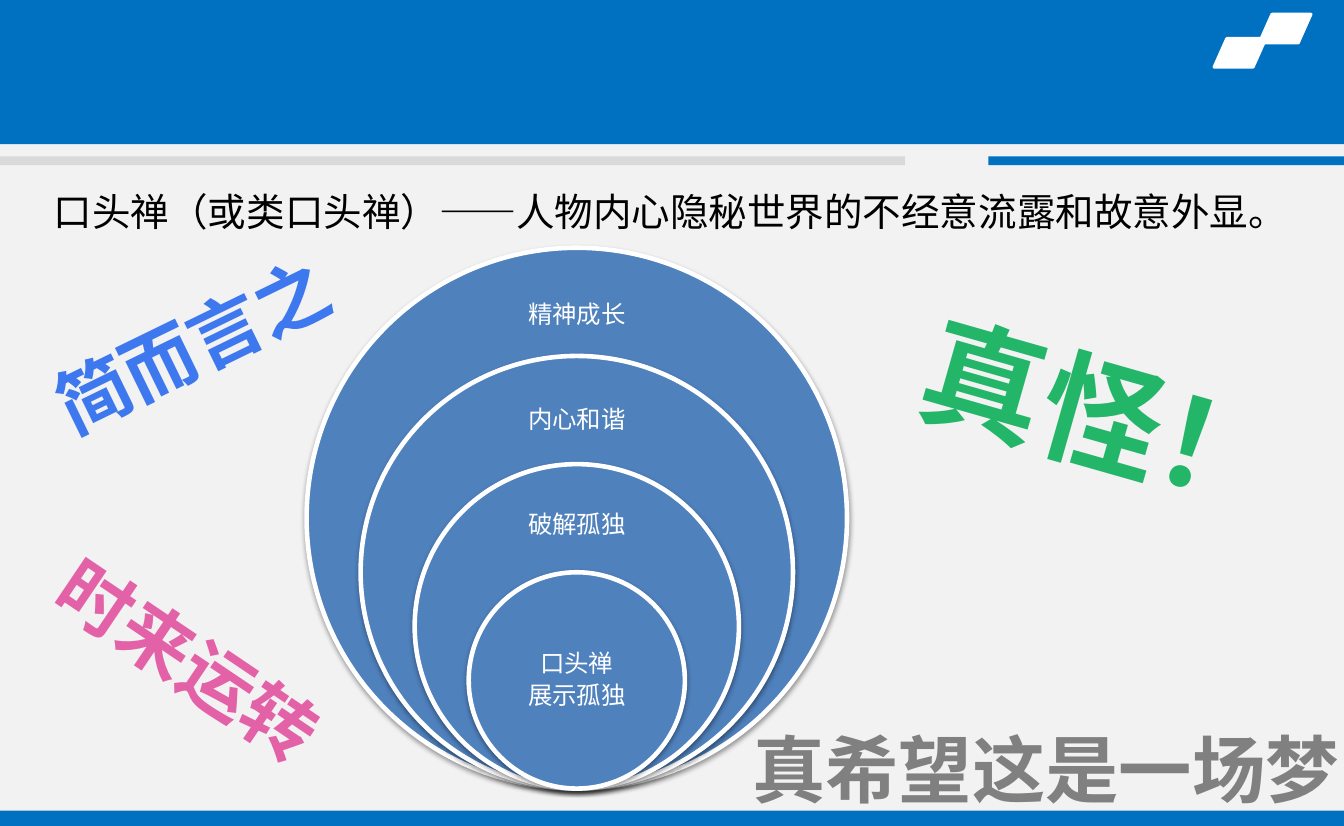
from dataclasses import dataclass

from lxml import etree
from pptx import Presentation
from pptx import util as u
from pptx.dml import color
from pptx.enum import shapes, text
from pptx.oxml import ns


@dataclass(frozen=True)
class Theme:
    background: str = "F2F2F2"
    bar: str = "0070C0"
    rule: str = "D9D9D9"
    circle: str = "4F81BD"
    white: str = "FFFFFF"
    black: str = "000000"
    blue: str = "3E78EE"
    pink: str = "E362A7"
    green: str = "23B568"
    gray: str = "808080"
    title_size: float = 25.2
    label_size: float = 16
    phrase_size: float = 48
    shout_size: float = 80
    sc: str = "Noto Sans CJK SC"
    jp: str = "Noto Sans CJK JP"
    latin: str = "Calibri"


theme = Theme()
presentation = Presentation()
presentation.slide_width = u.Inches(12.21)
presentation.slide_height = u.Inches(7.5)
slide = presentation.slides.add_slide(presentation.slide_layouts[6])
slide.background.fill.solid()
slide.background.fill.fore_color.rgb = color.RGBColor.from_string(theme.background)


def add_figure(kind, box, fill, line_width=0):
    shape = slide.shapes.add_shape(kind, *map(u.Inches, box))
    shape.shadow.inherit = False
    shape.fill.solid()
    shape.fill.fore_color.rgb = color.RGBColor.from_string(fill)
    if line_width:
        shape.line.color.rgb = color.RGBColor.from_string(theme.white)
        shape.line.width = u.Pt(line_width)
    else:
        shape.line.fill.background()
    return shape


def add_words(words, box, size, fill, latin, asian, bold=False, wrap=True):
    shape = slide.shapes.add_textbox(*map(u.Inches, box))
    frame = shape.text_frame
    frame.text = words
    frame.word_wrap = wrap
    frame.vertical_anchor = text.MSO_ANCHOR.MIDDLE
    for paragraph in frame.paragraphs:
        paragraph.alignment = text.PP_ALIGN.CENTER
        for run in paragraph.runs:
            run.font.size = u.Pt(size)
            run.font.bold = bold
            run.font.color.rgb = color.RGBColor.from_string(fill)
            run.font.name = latin
            properties = run.font._element
            etree.SubElement(properties, ns.qn("a:ea"), typeface=asian)
    return shape


bars = [
    ((0, 7.36, 12.21, 0.17), theme.bar),
    ((0, 0, 12.21, 1.31), theme.bar),
    ((0, 1.42, 8.22, 0.08), theme.rule),
    ((8.98, 1.42, 3.23, 0.08), theme.bar),
]
for box, fill in bars:
    add_figure(shapes.MSO_SHAPE.RECTANGLE, box, fill)

add_words("口头禅（或类口头禅）——人物内心隐秘世界的不经意流露和故意外显。",
          (0.26, 1.53, 11.66, 0.77), theme.title_size, theme.black, theme.sc, theme.sc)

for left, top in [(11.44, 0.13), (11.03, 0.35)]:
    tile = add_figure(shapes.MSO_SHAPE.PARALLELOGRAM, (left, top, 0.47, 0.26), theme.white, 2)
    tile.adjustments[0] = 0.444

center, bottom, largest = 5.24, 7.16, 4.91
labels = ["精神成长", "内心和谐", "破解孤独", "口头禅\n展示孤独"]
label_middles = [2.87, 3.82, 4.77, 6.18]
for index, (label, middle) in enumerate(zip(labels, label_middles)):
    diameter = largest * (1 - index / 5)
    circle = add_figure(shapes.MSO_SHAPE.OVAL,
                        (center - diameter / 2, bottom - diameter, diameter, diameter),
                        theme.circle, 3)
    effects = circle._element.spPr.find(ns.qn("a:effectLst"))
    shadow = etree.SubElement(effects, ns.qn("a:outerShdw"), blurRad=str(u.Pt(3.1)),
                              dist=str(u.Pt(1.6)), dir="5400000", rotWithShape="0")
    shade = etree.SubElement(shadow, ns.qn("a:srgbClr"), val=theme.black)
    etree.SubElement(shade, ns.qn("a:alpha"), val="38000")

    height = 0.7 if "\n" not in label else 0.98
    caption = add_words(label, (center - 0.69, middle - height / 2, 1.38, height),
                        theme.label_size, theme.white, theme.latin, theme.sc)
    for paragraph in caption.text_frame.paragraphs:
        paragraph.line_spacing = 0.9
    for paragraph in caption.text_frame.paragraphs[1:]:
        paragraph.space_before = u.Pt(4)

phrases = [
    ("简而言之", (0.31, 2.68, 2.87, 0.91), 334, theme.phrase_size, theme.blue, theme.sc),
    ("时来运转", (0.28, 5.53, 2.87, 0.91), 34, theme.phrase_size, theme.pink, theme.jp),
    ("真怪！", (8.25, 3.03, 3.55, 1.45), 16, theme.shout_size, theme.green, theme.jp),
    ("真希望这是一场梦", (6.73, 6.52, 5.54, 0.91), 0, theme.phrase_size, theme.gray, theme.jp),
]
for words, box, angle, size, fill, font in phrases:
    phrase = add_words(words, box, size, fill, font, font, bold=True, wrap=False)
    phrase.text_frame.auto_size = text.MSO_AUTO_SIZE.SHAPE_TO_FIT_TEXT
    phrase.rotation = angle

presentation.save("out.pptx")
